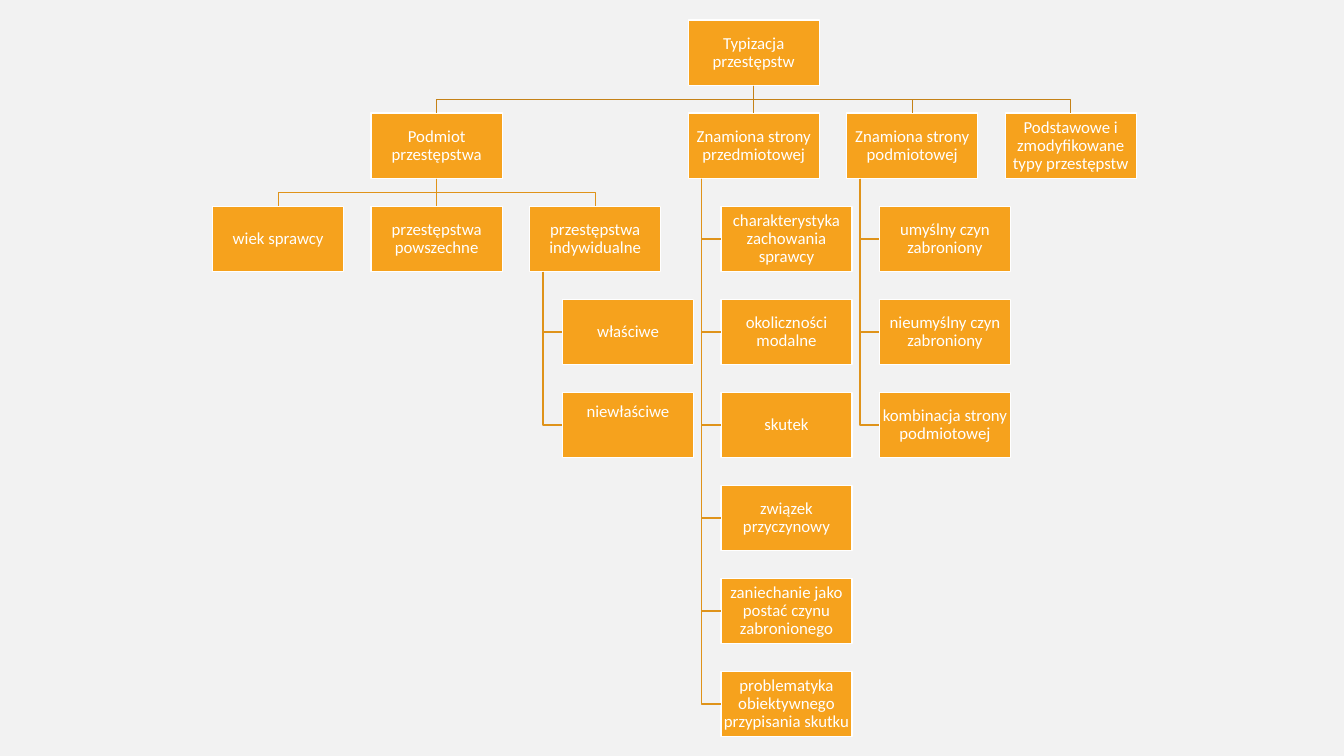
import dataclasses

import pptx
import pptx.dml.color
import pptx.enum.shapes
import pptx.enum.text
import pptx.util
import lxml.etree
import pptx.oxml.ns

Inches = pptx.util.Inches
Pt = pptx.util.Pt


@dataclasses.dataclass(frozen=True)
class Theme:
    background: str = "F2F2F2"
    box: str = "F6A21D"
    white: str = "FFFFFF"
    root_link: str = "C58217"
    branch_link: str = "DF931A"
    font: str = "Calibri"
    text_size: int = 12
    line_width: int = 1


@dataclasses.dataclass
class Topic:
    text: str
    column: int = 0
    spread: tuple = ()    # topics side by side in the next row
    hanging: tuple = ()   # topics stacked below, slightly indented
    lift: float = 0.01    # bottom inset of the box


# Grid of the chart, in inches
LEFT, TOP = 2.11, 0.2
BOX_WIDTH, BOX_HEIGHT = 1.3, 0.65
COLUMN_STEP = (9.97 - LEFT) / 5
ROW_STEP = (6.66 - TOP) / 7
INDENT = BOX_WIDTH / 4
SPINE = BOX_WIDTH / 10
INSET = 0.01


def rgb(value):
    return pptx.dml.color.RGBColor.from_string(value)


def write(frame, text, *, font, size, color, bottom=INSET):
    frame.word_wrap = True
    frame.vertical_anchor = pptx.enum.text.MSO_ANCHOR.MIDDLE
    frame.margin_left = frame.margin_right = frame.margin_top = Inches(INSET)
    frame.margin_bottom = Inches(bottom)
    paragraph = frame.paragraphs[0]
    paragraph.alignment = pptx.enum.text.PP_ALIGN.CENTER
    paragraph.line_spacing = 0.9
    run = paragraph.add_run()
    run.text = text
    run.font.name = font
    run.font.size = Pt(size)
    run.font.color.rgb = rgb(color)


class OrgChart:
    def __init__(self, slide, theme):
        self.slide = slide
        self.theme = theme
        slide.background.fill.solid()
        slide.background.fill.fore_color.rgb = rgb(theme.background)

    def style_line(self, line, color):
        line.color.rgb = rgb(color)
        line.width = Pt(self.theme.line_width)

    def box(self, topic, left, top):
        shape = self.slide.shapes.add_shape(
            pptx.enum.shapes.MSO_SHAPE.RECTANGLE,
            Inches(left), Inches(top), Inches(BOX_WIDTH), Inches(BOX_HEIGHT))
        shape.shadow.inherit = False
        shape.fill.solid()
        shape.fill.fore_color.rgb = rgb(self.theme.box)
        self.style_line(shape.line, self.theme.white)
        write(shape.text_frame, topic.text, font=self.theme.font,
              size=self.theme.text_size, color=self.theme.white, bottom=topic.lift)
        return shape

    def straight_link(self, parent, child, color):
        link = self.slide.shapes.add_connector(
            pptx.enum.shapes.MSO_CONNECTOR.STRAIGHT, 0, 0, 0, 0)
        link.begin_connect(parent, 2)
        link.end_connect(child, 0)
        self.style_line(link.line, color)
        lxml.etree.SubElement(link._element.spPr, pptx.oxml.ns.qn("a:effectLst"))

    def bent_link(self, points, color):
        builder = self.slide.shapes.build_freeform(*points[0])
        builder.add_line_segments(points[1:], close=False)
        link = builder.convert_to_shape()
        link.shadow.inherit = False
        link.fill.background()
        self.style_line(link.line, color)

    def spread_link(self, parent, child, color):
        start = parent.left + parent.width // 2
        end = child.left + child.width // 2
        bottom = parent.top + parent.height
        if start == end:
            self.straight_link(parent, child, color)
            return
        middle = (bottom + child.top) // 2
        self.bent_link([(start, bottom), (start, middle),
                        (end, middle), (end, child.top)], color)

    def hanging_link(self, parent, child, color):
        spine = parent.left + Inches(SPINE)
        middle = child.top + child.height // 2
        self.bent_link([(spine, parent.top + parent.height), (spine, middle),
                        (child.left, middle)], color)

    def branch(self, topic, row=0):
        left = LEFT + topic.column * COLUMN_STEP
        parent = self.box(topic, left, TOP + row * ROW_STEP)
        color = self.theme.branch_link if row else self.theme.root_link
        for subtopic in topic.spread:
            self.spread_link(parent, self.branch(subtopic, row + 1), color)
        for depth, subtopic in enumerate(topic.hanging, start=row + 1):
            child = self.box(subtopic, left + INDENT, TOP + depth * ROW_STEP)
            self.hanging_link(parent, child, color)
        return parent


# Classification of offences
OFFENCES = Topic("Typizacja przestępstw", 3, spread=(
    Topic("Podmiot przestępstwa", 1, spread=(
        Topic("wiek sprawcy", 0),
        Topic("przestępstwa powszechne", 1),
        Topic("przestępstwa indywidualne", 2, hanging=(
            Topic("właściwe"),
            Topic("niewłaściwe", lift=0.26),
        )),
    )),
    Topic("Znamiona strony przedmiotowej", 3, hanging=(
        Topic("charakterystyka zachowania sprawcy"),
        Topic("okoliczności modalne"),
        Topic("skutek"),
        Topic("związek przyczynowy"),
        Topic("zaniechanie jako postać czynu zabronionego"),
        Topic("problematyka obiektywnego przypisania skutku"),
    )),
    Topic("Znamiona strony podmiotowej", 4, hanging=(
        Topic("umyślny czyn zabroniony"),
        Topic("nieumyślny czyn zabroniony"),
        Topic("kombinacja strony podmiotowej"),
    )),
    Topic("Podstawowe i zmodyfikowane typy przestępstw", 5),
))


def main():
    deck = pptx.Presentation()
    deck.slide_width, deck.slide_height = Inches(13.33), Inches(7.5)
    slide = deck.slides.add_slide(deck.slide_layouts[6])
    OrgChart(slide, Theme()).branch(OFFENCES)
    deck.save("out.pptx")


if __name__ == "__main__":
    main()
